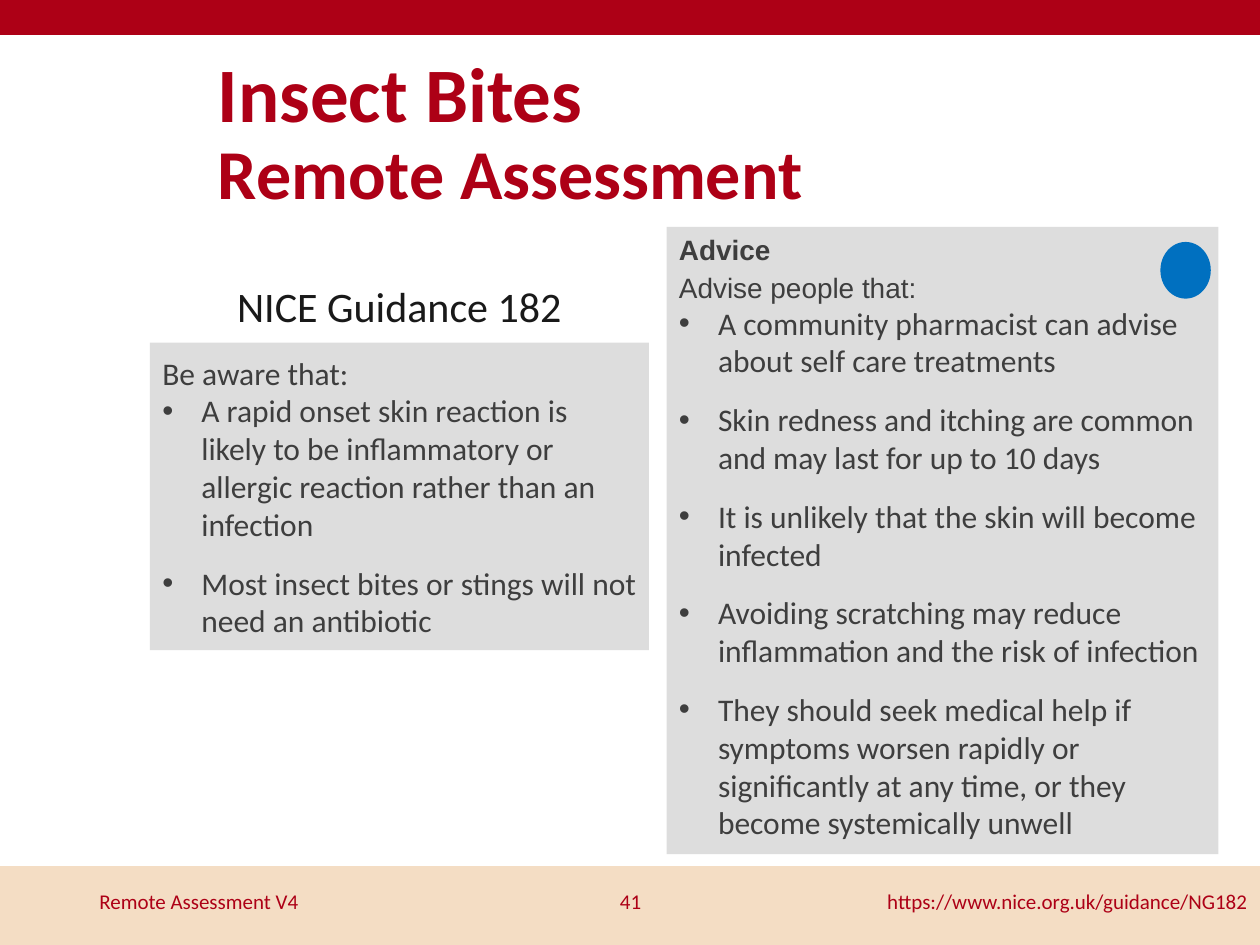
from dataclasses import dataclass

from lxml.etree import SubElement
from pptx import Presentation
from pptx.dml.color import RGBColor
from pptx.enum.shapes import MSO_SHAPE as Shape
from pptx.enum.text import MSO_ANCHOR as Anchor, PP_ALIGN as Align
from pptx.oxml.ns import qn
from pptx.util import Emu, Inches, Pt

RED, SAND, GREY, BLUE = "AD0016", "F4DDC4", "DDDDDD", "0070C0"
BODY, DARK = "3E3E3E", "191919"
INDENT = Inches(0.31)


@dataclass(frozen=True)
class Area:
    """Place on the page, in percent of the slide's width and height."""
    left: float
    top: float
    width: float
    height: float


@dataclass(frozen=True)
class Footer:
    text: str
    left: float
    width: float
    align: Align


deck = Presentation()
deck.slide_width, deck.slide_height = Inches(10), Inches(7.5)
page = deck.slides.add_slide(deck.slide_layouts[6])


def color(value: str) -> RGBColor:
    return RGBColor.from_string(value)


def place(area: Area) -> list[Emu]:
    across, down = deck.slide_width / 100, deck.slide_height / 100
    return [Emu(round(area.left * across)), Emu(round(area.top * down)),
            Emu(round(area.width * across)), Emu(round(area.height * down))]


def add_panel(area: Area, fill: str, kind=Shape.RECTANGLE, line: str | None = None):
    panel = page.shapes.add_shape(kind, *place(area))
    panel.shadow.inherit = False
    panel.fill.solid()
    panel.fill.fore_color.rgb = color(fill)
    if line:
        panel.line.color.rgb = color(line)
        panel.line.width = Pt(1)
    else:
        panel.line.fill.background()
    return panel


def add_label(area: Area, anchor=Anchor.TOP):
    box = page.shapes.add_textbox(*place(area))
    box.text_frame.word_wrap = True
    box.text_frame.vertical_anchor = anchor
    return box


def add_span(para, text: str, size=18, font="Calibri", fill=BODY, bold=False) -> None:
    span = para.add_run()
    span.text = text
    span.font.size, span.font.name, span.font.bold = Pt(size), font, bold
    span.font.color.rgb = color(fill)


def write(box, text: str, bullet=False, align=Align.LEFT, before=0, **style):
    """Fill the first paragraph if it is empty, otherwise append one."""
    frame = box.text_frame
    para = frame.paragraphs[0]
    if para.runs:
        para = frame.add_paragraph()
    para.alignment = align
    if before:
        para.space_before = Pt(before)
    if bullet:
        para.space_after = Pt(12)
        props = para._p.get_or_add_pPr()
        props.set("marL", str(INDENT))
        props.set("indent", str(-INDENT))
        SubElement(props, qn("a:buFont")).set("typeface", "Arial")
        SubElement(props, qn("a:buChar")).set("char", "•")
    add_span(para, text, **style)
    return para


# Bands at the foot and head of the page
add_panel(Area(0, 91.73, 100, 8.27), SAND, line=SAND)
add_panel(Area(0, -0.13, 100, 3.73), RED, line=RED)

# Title
title = add_label(Area(16.3, 4.67, 78.8, 19.33), Anchor.MIDDLE)
heading = write(title, "Insect Bites", size=44, fill=RED, bold=True)
heading.line_spacing = 0.9
heading.add_line_break()
add_span(heading, "Remote Assessment", size=40, fill=RED, bold=True)

# Footer
for footer in (
    Footer("Remote Assessment V4", 6.9, 22.5, Align.LEFT),
    Footer("41", 38.8, 22.5, Align.CENTER),
    Footer("https://www.nice.org.uk/guidance/NG182", 66.2, 33.8, Align.RIGHT),
):
    label = add_label(Area(footer.left, 92.67, footer.width, 5.33), Anchor.MIDDLE)
    write(label, footer.text, align=footer.align, size=12, fill=RED)

# Guidance panel with its caption
caption = add_label(Area(11.9, 29.07, 39.6, 6.67))
write(caption, "NICE Guidance 182", align=Align.CENTER, size=24, fill=DARK)

guidance = add_panel(Area(11.9, 36.27, 39.6, 32.53), GREY)
guidance.text_frame.word_wrap = True
guidance.text_frame.vertical_anchor = Anchor.MIDDLE
write(guidance, "Be aware that:")
for point in (
    "A rapid onset skin reaction is likely to be inflammatory or allergic "
    "reaction rather than an infection",
    "Most insect bites or stings will not need an antibiotic",
):
    write(guidance, point, bullet=True)

# Advice panel with its marker
advice = add_panel(Area(52.9, 24, 43.8, 66.4), GREY)
advice.text_frame.word_wrap = True
advice.text_frame.vertical_anchor = Anchor.TOP
write(advice, "Advice", size=16, font="Arial", bold=True)
write(advice, "Advise people that:", before=2, size=16, font="Arial")
for point in (
    "A community pharmacist can advise about self care treatments",
    "Skin redness and itching are common and may last for up to 10 days",
    "It is unlikely that the skin will become infected",
    "Avoiding scratching may reduce inflammation and the risk of infection",
    "They should seek medical help if symptoms worsen rapidly or significantly "
    "at any time, or they become systemically unwell",
):
    write(advice, point, bullet=True)
add_panel(Area(92.1, 25.6, 4, 6), BLUE, kind=Shape.OVAL)

deck.save("out.pptx")
